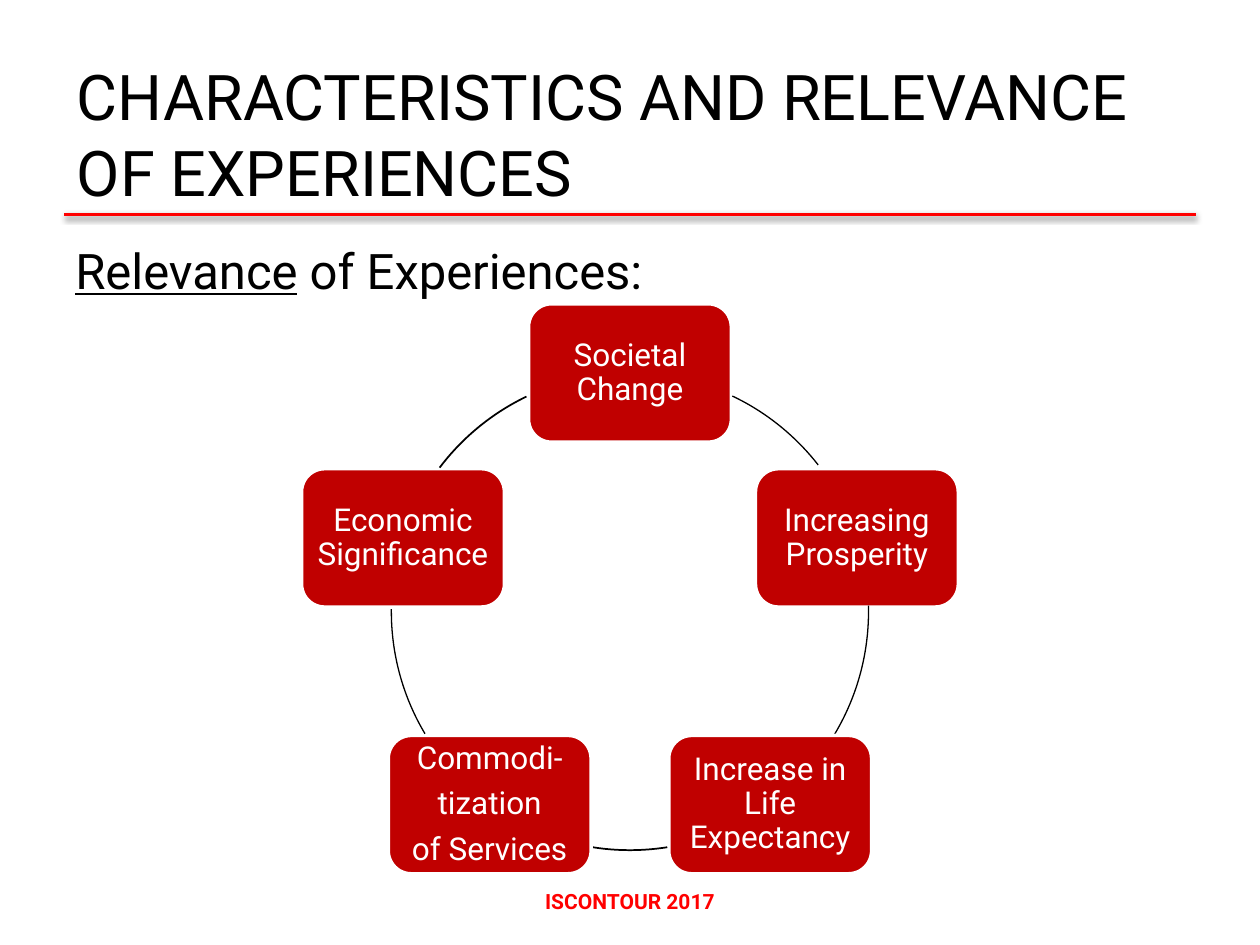
import math
from dataclasses import dataclass

from lxml import etree
from pptx import Presentation
from pptx.dml.color import RGBColor
from pptx.enum.shapes import MSO_CONNECTOR, MSO_SHAPE
from pptx.enum.text import MSO_ANCHOR, PP_ALIGN
from pptx.oxml.ns import qn
from pptx.util import Cm, Pt

ARC, CARD, LINE = MSO_SHAPE.ARC, MSO_SHAPE.ROUNDED_RECTANGLE, MSO_CONNECTOR.STRAIGHT
TOP, MIDDLE, BOTTOM = MSO_ANCHOR.TOP, MSO_ANCHOR.MIDDLE, MSO_ANCHOR.BOTTOM
LEFT, CENTER = PP_ALIGN.LEFT, PP_ALIGN.CENTER


@dataclass(frozen=True)
class Theme:
    """Colours, font and type sizes of the slide."""
    font: str = "Roboto"
    ink: RGBColor = RGBColor(0, 0, 0)
    paper: RGBColor = RGBColor(255, 255, 255)
    accent: RGBColor = RGBColor(255, 0, 0)
    card: RGBColor = RGBColor(192, 0, 0)
    title: Pt = Pt(36)
    body: Pt = Pt(28)
    label: Pt = Pt(18)
    footer: Pt = Pt(12)


@dataclass(frozen=True)
class Step:
    """A card on the ring and the arc that follows it, in clockwise degrees."""
    lines: tuple[str, ...]
    arc_start: float
    arc_end: float
    arc_width: float = 0.75


@dataclass(frozen=True)
class Ring:
    """Centre and radius of the cycle and the size of its cards, in cm."""
    x: float = 12.7
    y: float = 12.33
    radius: float = 4.81
    card_width: float = 4.09
    card_height: float = 2.79


THEME = Theme()
RING = Ring()
STEPS = (
    Step(("Societal Change",), 295.4, 322.1),
    Step(("Increasing Prosperity",), 358.6, 31),
    Step(("Increase in Life Expectancy",), 81, 99.2, 1),
    Step(("Commodi-", "tization", "of Services"), 149.2, 180.8),
    Step(("Economic Significance",), 217.1, 244.3, 1),
)


def apply(target: object, values: dict) -> None:
    """Set each named attribute of the target."""
    for name, value in values.items():
        setattr(target, name, value)


def add_run(p, text: str, size: Pt, color: RGBColor, **extra) -> None:
    """Append a run in the slide font."""
    r = p.add_run()
    r.text = text
    apply(r.font, {"name": THEME.font, "size": size, **extra})
    r.font.color.rgb = color


def add_text(s, box: tuple[float, ...], anchor, align):
    """Add a wrapping text box and return its first paragraph."""
    tf = s.shapes.add_textbox(*map(Cm, box)).text_frame
    apply(tf, {"word_wrap": True, "vertical_anchor": anchor})
    p = tf.paragraphs[0]
    p.alignment = align
    return p


def add_rule(s) -> None:
    """Draw the red title rule with its soft shadow."""
    rule = s.shapes.add_connector(LINE, Cm(1.3), Cm(4.32), Cm(24.1), Cm(4.32))
    rule.line.color.rgb = THEME.accent
    rule.line.width = Pt(2)
    effects = etree.SubElement(rule._element.spPr, qn("a:effectLst"))
    shadow = etree.SubElement(effects, qn("a:outerShdw"), blurRad="40000",
                              dist="20000", dir="5400000", rotWithShape="0")
    color = etree.SubElement(shadow, qn("a:srgbClr"), val="000000")
    etree.SubElement(color, qn("a:alpha"), val="38000")


def add_arc(s, step: Step) -> None:
    """Draw the stretch of the ring that follows a card."""
    r = RING.radius
    sp = s.shapes.add_shape(ARC, Cm(RING.x - r), Cm(RING.y - r), Cm(2 * r), Cm(2 * r))
    for i, angle in enumerate((step.arc_start, step.arc_end)):
        sp.adjustments[i] = angle * 0.6
    sp.shadow.inherit = False
    sp.fill.background()
    sp.line.color.rgb = THEME.ink
    sp.line.width = Pt(step.arc_width)


def add_card(s, step: Step, angle: float) -> None:
    """Place a labelled card on the ring at the given angle."""
    w, h = RING.card_width, RING.card_height
    x = RING.x + RING.radius * math.cos(math.radians(angle)) - w / 2
    y = RING.y + RING.radius * math.sin(math.radians(angle)) - h / 2
    sp = s.shapes.add_shape(CARD, Cm(x), Cm(y), Cm(w), Cm(h))
    sp.shadow.inherit = False
    sp.fill.solid()
    sp.fill.fore_color.rgb = THEME.card
    sp.line.color.rgb = THEME.paper
    sp.line.width = Pt(2)
    tf = sp.text_frame
    sides = ("left", "right", "top", "bottom")
    apply(tf, {f"margin_{side}": Cm(0.15) for side in sides})
    apply(tf, {"word_wrap": True, "vertical_anchor": MIDDLE})
    for i, line in enumerate(step.lines):
        p = tf.add_paragraph() if i else tf.paragraphs[0]
        apply(p, {"alignment": CENTER, "line_spacing": 0.9, "space_after": Pt(6.5)})
        add_run(p, line, THEME.label, THEME.paper)


def main() -> None:
    """Build and save the slide."""
    prs = Presentation()
    apply(prs, {"slide_width": Cm(25.4), "slide_height": Cm(19.05)})
    s = prs.slides.add_slide(prs.slide_layouts[6])
    add_rule(s)
    p = add_text(s, (8.1, 17.78, 9.2, 0.76), TOP, CENTER)
    add_run(p, "ISCONTOUR 2017", THEME.footer, THEME.accent, bold=True)
    p = add_text(s, (1.3, 0.53, 22.8, 3.81), BOTTOM, LEFT)
    add_run(p, "CHARACTERISTICS AND RELEVANCE OF EXPERIENCES", THEME.title, THEME.ink)
    p = add_text(s, (1.27, 4.72, 22.86, 12.29), TOP, LEFT)
    add_run(p, "Relevance", THEME.body, THEME.ink, underline=True)
    add_run(p, " of Experiences:", THEME.body, THEME.ink)
    for i, step in enumerate(STEPS):
        add_card(s, step, -90 + i * 360 / len(STEPS))
        add_arc(s, step)
    prs.save("out.pptx")


if __name__ == "__main__":
    main()
